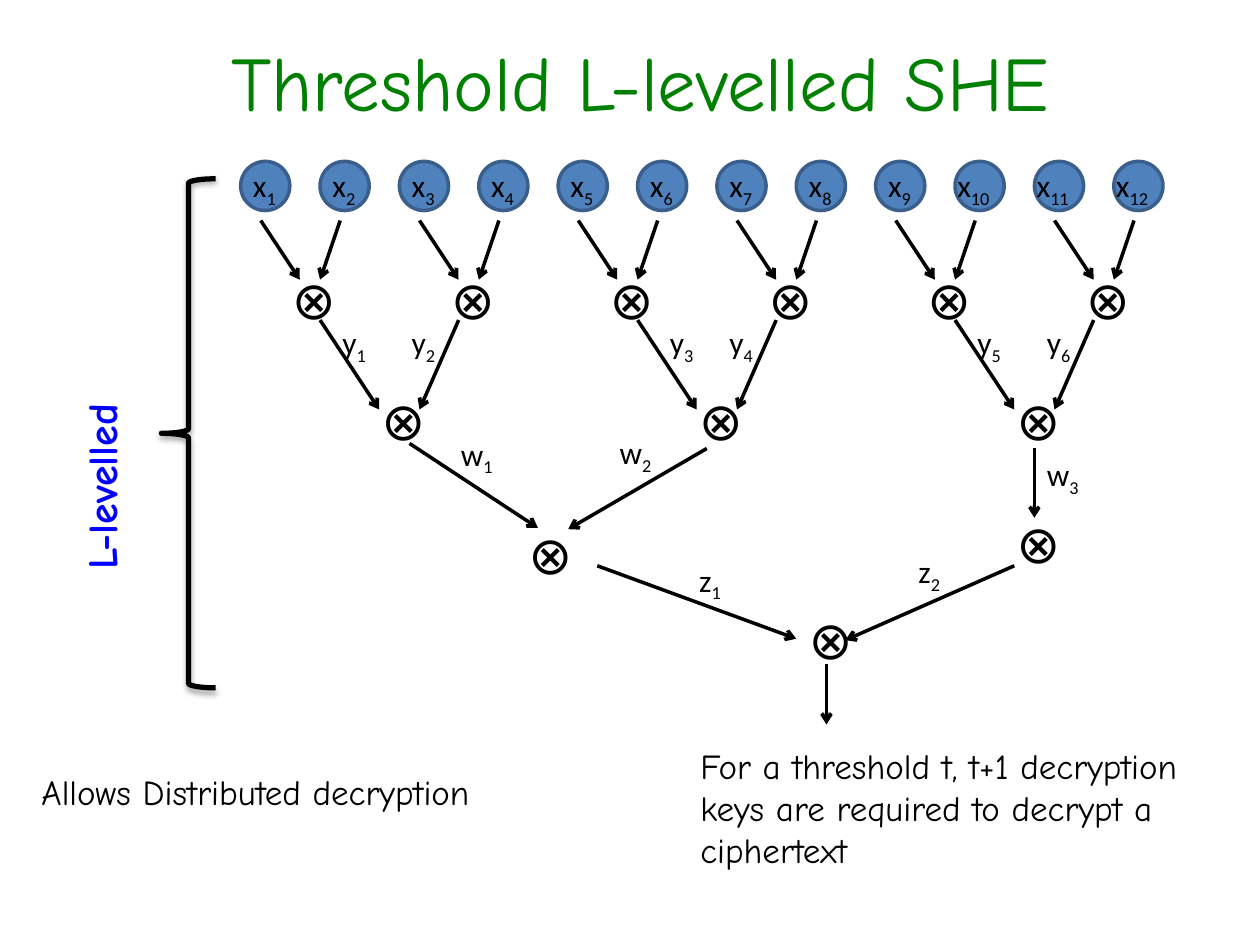
from dataclasses import dataclass

from lxml import etree
from pptx import Presentation
from pptx.dml.color import RGBColor
from pptx.enum.shapes import MSO_CONNECTOR, MSO_SHAPE
from pptx.enum.text import MSO_ANCHOR, PP_ALIGN
from pptx.oxml.ns import qn
from pptx.util import Pt

STRAIGHT = MSO_CONNECTOR.STRAIGHT
ELLIPSE, LEFT_BRACE = MSO_SHAPE.OVAL, MSO_SHAPE.LEFT_BRACE
TOP, MIDDLE = MSO_ANCHOR.TOP, MSO_ANCHOR.MIDDLE
LEFT, CENTER = PP_ALIGN.LEFT, PP_ALIGN.CENTER


@dataclass(frozen=True)
class Theme:
    ink: str = "000000"
    title: str = "008000"
    level: str = "0000FF"
    node_fill: str = "4F81BD"
    node_line: str = "3A5F8C"
    hand_font: str = "Comic Neue"
    math_font: str = "Calibri"
    title_size: int = 44
    level_size: int = 24
    body_size: int = 20
    label_size: int = 18
    gate_size: int = 30
    line_width: int = 2
    brace_width: int = 3


class CircuitSlide:
    def __init__(self, slide, theme):
        self.shapes = slide.shapes
        self.theme = theme

    def style_run(self, run, font_name, size, color, bold=False):
        run.font.name = font_name
        run.font.size = Pt(size)
        run.font.bold = bold
        run.font.color.rgb = RGBColor.from_string(color)

    def text(self, content, left, top, width, height, size, color=None,
             font_name=None, bold=False, align=LEFT, anchor=TOP):
        shape = self.shapes.add_textbox(Pt(left), Pt(top), Pt(width), Pt(height))
        frame = shape.text_frame
        frame.word_wrap = True
        frame.vertical_anchor = anchor
        frame.text = content
        paragraph = frame.paragraphs[0]
        paragraph.alignment = align
        self.style_run(paragraph.runs[0], font_name or self.theme.hand_font,
                       size, color or self.theme.ink, bold)
        return shape

    def label(self, letter, index, left, top):
        theme = self.theme
        shape = self.text(letter, left, top, 62.6, 28.8, theme.label_size,
                          font_name=theme.math_font)
        subscript = shape.text_frame.paragraphs[0].add_run()
        subscript.text = str(index)
        self.style_run(subscript, theme.math_font, theme.label_size, theme.ink)
        subscript.font._element.set("baseline", "-25000")

    def gate(self, left, top):
        self.text("⊗", left, top, 33.8, 43.9, self.theme.gate_size,
                  font_name=self.theme.math_font)

    def node(self, left, top, diameter):
        shape = self.shapes.add_shape(ELLIPSE, Pt(left), Pt(top), Pt(diameter), Pt(diameter))
        shape.shadow.inherit = False
        shape.fill.solid()
        shape.fill.fore_color.rgb = RGBColor.from_string(self.theme.node_fill)
        shape.line.color.rgb = RGBColor.from_string(self.theme.node_line)
        shape.line.width = Pt(self.theme.line_width)

    def arrow(self, start_x, start_y, end_x, end_y):
        connector = self.shapes.add_connector(
            STRAIGHT, Pt(start_x), Pt(start_y), Pt(end_x), Pt(end_y))
        connector.line.color.rgb = RGBColor.from_string(self.theme.ink)
        connector.line.width = Pt(self.theme.line_width)
        line = connector.line._get_or_add_ln()
        etree.SubElement(line, qn("a:tailEnd"), type="arrow")
        etree.SubElement(connector._element.spPr, qn("a:effectLst"))

    def brace(self, left, top, width, height):
        shape = self.shapes.add_shape(LEFT_BRACE, Pt(left), Pt(top), Pt(width), Pt(height))
        shape.fill.background()
        shape.line.color.rgb = RGBColor.from_string(self.theme.ink)
        shape.line.width = Pt(self.theme.brace_width)
        # Soft shadow straight below the brace
        effects = etree.SubElement(shape._element.spPr, qn("a:effectLst"))
        shadow = etree.SubElement(
            effects, qn("a:outerShdw"), blurRad=str(Pt(3.1)), dist=str(Pt(1.8)),
            dir="5400000", rotWithShape="0")
        color = etree.SubElement(shadow, qn("a:srgbClr"), val=self.theme.ink)
        etree.SubElement(color, qn("a:alpha"), val="35000")


def main():
    presentation = Presentation()
    presentation.slide_width, presentation.slide_height = Pt(720), Pt(540)
    slide = presentation.slides.add_slide(presentation.slide_layouts[6])
    theme = Theme()
    circuit = CircuitSlide(slide, theme)

    # Title and remarks
    circuit.text("Threshold L-levelled SHE", 55.7, 13, 620.6, 66.2, theme.title_size,
                 theme.title, align=CENTER, anchor=MIDDLE)
    circuit.text("Allows Distributed decryption", 16.6, 437, 376.6, 31.7, theme.body_size)
    circuit.text("For a threshold t, t+1 decryption keys are required to decrypt a ciphertext",
                 393.1, 421.9, 311.8, 79.9, theme.body_size)

    # Depth of the circuit
    circuit.brace(92.2, 102.2, 31, 290.9)
    level = circuit.text("L-levelled", -14.4, 242.6, 144, 36, theme.level_size,
                         theme.level, bold=True)
    level.rotation = 270

    # Inputs
    first_left, pitch = 137.5, 45.36
    for index in range(12):
        left = first_left + index * pitch
        circuit.node(left, 92.2, 28.1)
        two_digit_shift = 5.8 if index >= 9 else 0
        circuit.label("x", index + 1, left - two_digit_shift, 91.4)

    # First level: one gate for two inputs
    for pair in range(6):
        left = first_left + pair * 2 * pitch
        circuit.gate(left + 22.3, 149)
        circuit.arrow(left + 11.5, 126, left + 33.8, 159.8)
        circuit.arrow(left + 56.9, 126, left + 45.4, 159.8)

    # Second level: one gate for four inputs
    for group in range(3):
        left = first_left + group * 4 * pitch
        circuit.gate(left + 73.4, 218.2)
        circuit.arrow(left + 45.4, 182.9, left + 79.2, 234)
        circuit.arrow(left + 124.6, 182.9, left + 102.2, 234)

    # Lower levels
    for left, top in ((294.8, 294.5), (573.8, 288.7), (455, 343.4)):
        circuit.gate(left, top)
    for ends in (
        (234, 253.4, 307.4, 301.7),
        (403.9, 256.3, 324.7, 302.4),
        (591.1, 256.3, 591.1, 295.9),
        (341.3, 323.3, 455, 365),
        (579.6, 323.3, 483.1, 365.8),
        (472.3, 379.4, 472.3, 414),
    ):
        circuit.arrow(*ends)

    # Names of the intermediate values
    value_positions = {
        "y": ((188.6, 181), (228.2, 181), (375.8, 181),
              (409.7, 181), (551.5, 181), (591.1, 181)),
        "w": ((256.3, 244.8), (347, 244.1), (591.1, 256.3)),
        "z": ((392.4, 316.8), (517.7, 311.8)),
    }
    for letter, positions in value_positions.items():
        for index, (left, top) in enumerate(positions, start=1):
            circuit.label(letter, index, left, top)

    presentation.save("out.pptx")


if __name__ == "__main__":
    main()
